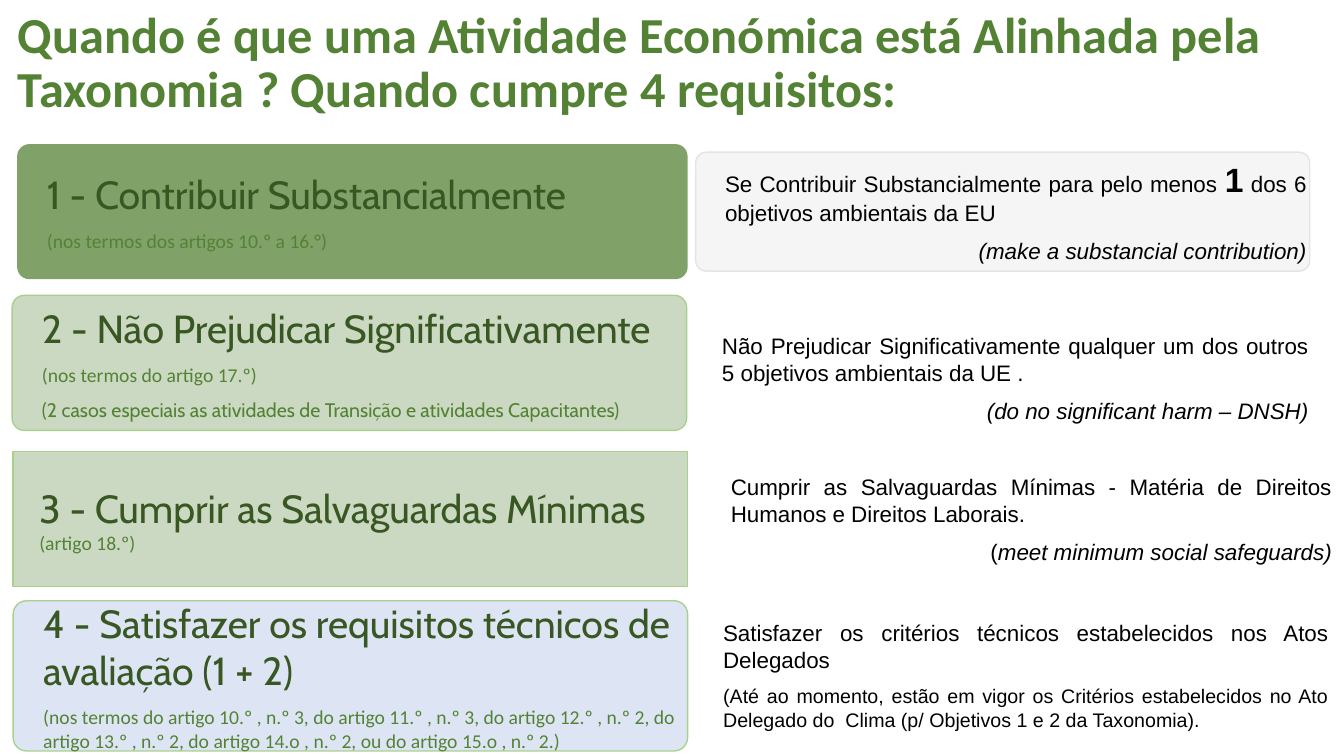
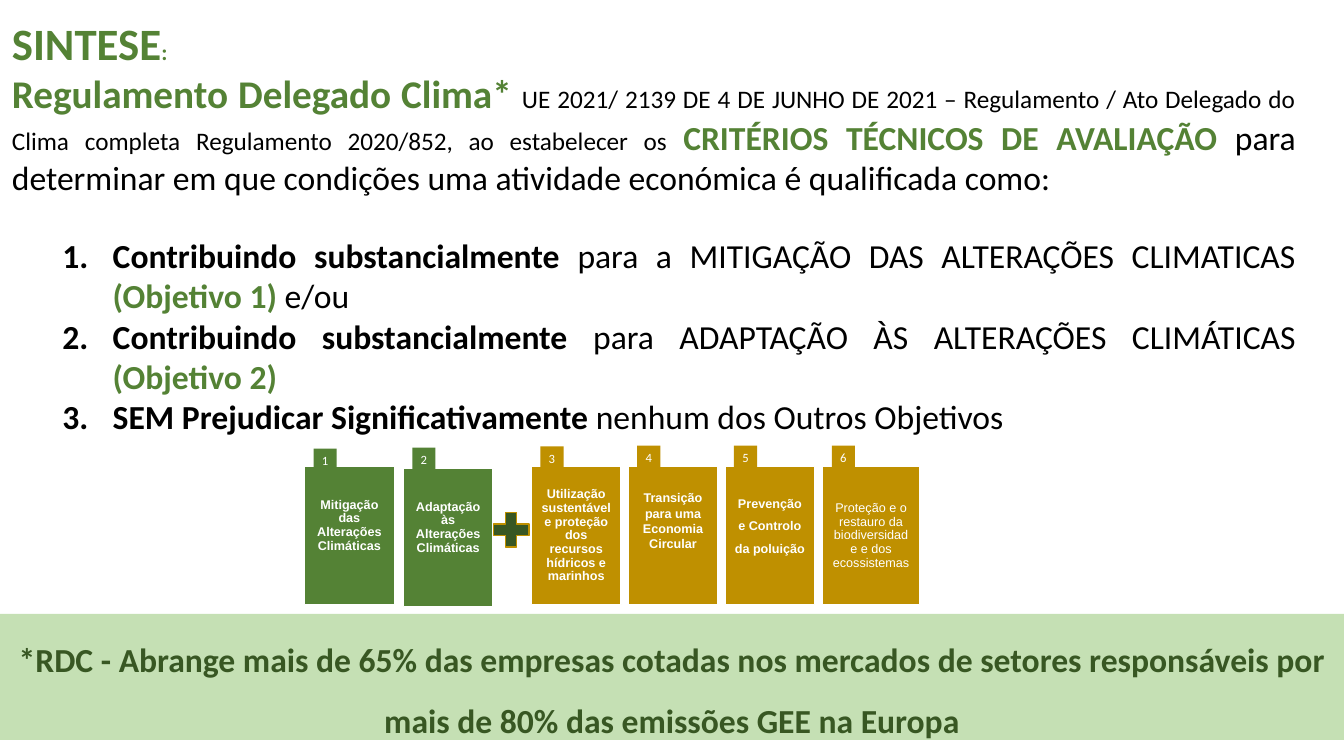
import pptx
import pptx.util
import pptx.dml.color
import pptx.enum.shapes
import pptx.enum.text
import pptx.oxml.ns
from lxml import etree

Inches, Pt = pptx.util.Inches, pptx.util.Pt
SHAPE = pptx.enum.shapes.MSO_SHAPE
ALIGN = pptx.enum.text.PP_ALIGN
ANCHOR = pptx.enum.text.MSO_ANCHOR
qn = pptx.oxml.ns.qn

GREEN, DARK_GREEN, LIGHT_GREEN = "548235", "385723", "C5E0B4"
OUTLINE, BLUE, GOLD = "A9D18E", "8FAADC", "BF9000"
GREY, BLACK, WHITE = "F5F5F5", "000000", "FFFFFF"

# Text styles: font attributes
TITLE = dict(name="Calibri", size=36, color=GREEN, bold=True)
HEADING = dict(name="Cabin", size=28, color=DARK_GREEN)
ARTICLE = dict(name="Calibri", size=14, color=GREEN)
EXPLANATION = dict(name="Arial", size=16, color=BLACK)
SUMMARY = dict(name="Calibri", size=24, color=BLACK)
ACCENT = dict(color=GREEN, bold=True)
BOLD = dict(bold=True)
ITALIC = dict(italic=True)


def rgb(color):
    return pptx.dml.color.RGBColor.from_string(color)


def set_font(font, name=None, size=None, color=None, bold=None, italic=None):
    if name:
        font.name = name
    if size:
        font.size = Pt(size)
    if color:
        font.color.rgb = rgb(color)
    if bold is not None:
        font.bold = bold
    if italic is not None:
        font.italic = italic


def set_frame(tf, anchor=ANCHOR.TOP, insets=(0.1, 0.05, 0.1, 0.05), wrap=True):
    tf.word_wrap = wrap
    tf.vertical_anchor = anchor
    tf.margin_left, tf.margin_top, tf.margin_right, tf.margin_bottom = map(Inches, insets)


def add_paragraph(tf, runs, style, align=ALIGN.LEFT, line=None, before=None,
                  indent=0, hanging=0):
    """Append a paragraph; runs is a string or a list of (text, font overrides)."""
    first = tf.paragraphs[0]
    p = tf.add_paragraph() if first.runs else first
    p.alignment = align
    if line:
        p.line_spacing = line
    if before is not None:
        p.space_before = Pt(before)
    set_font(p.font, **style)
    pPr = p._p.get_or_add_pPr()
    if indent:
        pPr.set("marL", str(Inches(indent)))
        pPr.set("indent", str(Inches(hanging)))
    for text, override in [(runs, {})] if isinstance(runs, str) else runs:
        r = p.add_run()
        r.text = text
        if override:
            set_font(r.font, **override)
    return p


def number_paragraph(p):
    pPr = p._p.get_or_add_pPr()
    bullet = etree.Element(qn("a:buAutoNum"), type="arabicPeriod")
    pPr.find(qn("a:defRPr")).addprevious(bullet)


def add_box(slide, kind, at, fill=None, alpha=100, line=None):
    sp = slide.shapes.add_shape(kind, *map(Inches, at))
    sp.shadow.inherit = False
    if fill:
        sp.fill.solid()
        sp.fill.fore_color.rgb = rgb(fill)
        if alpha < 100:
            color = sp.fill._xPr.find(qn("a:solidFill"))[0]
            etree.SubElement(color, qn("a:alpha"), val=str(alpha * 1000))
    else:
        sp.fill.background()
    if line:
        sp.line.color.rgb = rgb(line)
        sp.line.width = Pt(1)
    else:
        sp.line.fill.background()
    return sp


def add_text(slide, at):
    tf = slide.shapes.add_textbox(*map(Inches, at)).text_frame
    set_frame(tf)
    return tf


def add_panel(slide, at, paragraphs, fill=None, alpha=100, line=None, corner=0.09):
    """Rounded box holding (runs, style, alignment) paragraphs."""
    sp = add_box(slide, SHAPE.ROUNDED_RECTANGLE, at, fill, alpha, line)
    sp.adjustments[0] = corner
    set_frame(sp.text_frame, ANCHOR.MIDDLE, (0, 0, 0, 0))
    for runs, style, align in paragraphs:
        add_paragraph(sp.text_frame, runs, style, align, before=8, indent=0.26)


def add_requirement(slide, at, heading, *articles, **look):
    paragraphs = [(heading, HEADING, ALIGN.LEFT)]
    paragraphs += [(runs, ARTICLE, ALIGN.LEFT) for runs in articles]
    add_panel(slide, at, paragraphs, **look)


def add_explanation(slide, at, runs, english, **look):
    add_panel(slide, at, [(runs, EXPLANATION, ALIGN.JUSTIFY),
                          (english, EXPLANATION, ALIGN.RIGHT)], **look)


def add_objective(slide, number, left, top, tab_top, text, color, width=0.89,
                  bold=True, line=0.9, lift=0):
    """Card with a numbered tab; lift is extra bottom inset."""
    card = add_box(slide, SHAPE.RECTANGLE, (left, top, width, 1.37), color, line=WHITE)
    set_frame(card.text_frame, ANCHOR.MIDDLE, (0.08, 0.08, 0.08, 0.08 + lift))
    add_paragraph(card.text_frame, text,
                  dict(name="Arial", size=9, color=WHITE, bold=bold), ALIGN.CENTER, line)
    tab = add_box(slide, SHAPE.RECTANGLE, (left + 0.09, tab_top, 0.23, 0.24), color)
    set_frame(tab.text_frame, ANCHOR.MIDDLE, wrap=False)
    add_paragraph(tab.text_frame, str(number),
                  dict(name="Calibri", size=9, color=WHITE), ALIGN.CENTER)


def build_requirements(slide):
    add_paragraph(add_text(slide, (0.08, 0.05, 13.14, 1.18)),
                  "Quando é que uma Atividade Económica está Alinhada pela Taxonomia ? "
                  "Quando cumpre 4 requisitos:", TITLE, line=0.9)

    pale = dict(fill=GREEN, alpha=30, line=OUTLINE)
    add_requirement(slide, (0.17, 1.43, 6.65, 1.34), "1 - Contribuir Substancialmente",
                    "(nos termos dos artigos 10.º a 16.°)", fill=GREEN, alpha=74)
    add_requirement(slide, (0.12, 2.93, 6.69, 1.34), "2 - Não Prejudicar Significativamente",
                    "(nos termos do artigo 17.º)",
                    [("(2 casos especiais as atividades de Transição e atividades "
                      "Capacitantes)", dict(name="Cabin"))], **pale)
    add_requirement(slide, (0.13, 4.48, 6.69, 1.34),
                    [("3 - Cumprir as Salvaguardas Mínimas ", {}),
                     ("(artigo 18.º)", ARTICLE)], corner=0, **pale)
    add_requirement(slide, (0.13, 5.96, 6.69, 1.49),
                    "4 - Satisfazer os requisitos técnicos de avaliação (1 + 2)",
                    "(nos termos do artigo 10.º , n.º 3, do artigo 11.º , n.º 3, do artigo "
                    "12.º , n.º 2, do artigo 13.º , n.º 2, do artigo 14.o , n.º 2, ou do "
                    "artigo 15.o , n.º 2.)", fill=BLUE, alpha=30, line=OUTLINE)

    add_explanation(slide, (6.9, 1.51, 6.09, 1.18),
                    [("Se Contribuir Substancialmente para pelo menos ", {}),
                     ("1", dict(size=24, bold=True)),
                     (" dos 6 objetivos ambientais da EU", {})],
                    [("(make a substancial contribution)", ITALIC)], fill=GREY, line="E4E4E4")
    add_explanation(slide, (6.87, 3.16, 6.14, 1.18),
                    "Não Prejudicar Significativamente qualquer um dos outros 5 objetivos "
                    "ambientais da UE .", [("(do no significant harm – DNSH)", ITALIC)])
    add_explanation(slide, (6.96, 4.6, 6.28, 1.1),
                    "Cumprir as Salvaguardas Mínimas - Matéria de Direitos Humanos e "
                    "Direitos Laborais.",
                    [("(", {}), ("meet minimum social safeguards)", ITALIC)])
    add_panel(slide, (6.87, 5.9, 6.35, 1.6), [
        ("Satisfazer os critérios técnicos estabelecidos nos Atos Delegados",
         EXPLANATION, ALIGN.JUSTIFY),
        ("(Até ao momento, estão em vigor os Critérios estabelecidos no Ato Delegado do  "
         "Clima (p/ Objetivos 1 e 2 da Taxonomia).",
         dict(EXPLANATION, size=14), ALIGN.JUSTIFY)])


def build_summary(slide):
    objectives = [
        (3.02, 4.63, 4.45, "Mitigação das Alterações Climáticas", GREEN, dict(lift=0.2)),
        (4.0, 4.65, 4.44, "Adaptação às Alterações Climáticas", GREEN, dict(lift=0.2)),
        (5.27, 4.63, 4.43, "Utilização sustentável e proteção dos recursos hídricos e "
         "marinhos", GOLD, {}),
        (6.23, 4.63, 4.42, "Transição para uma Economia Circular", GOLD,
         dict(line=1, lift=0.3)),
        (7.19, 4.63, 4.42, "Prevenção e Controlo da poluição", GOLD,
         dict(line=1.5, lift=0.27)),
        (8.16, 4.63, 4.42, "Proteção e o restauro da biodiversidade e dos ecossistemas",
         GOLD, dict(width=0.96, bold=False)),
    ]
    for number, (left, top, tab_top, text, color, look) in enumerate(objectives, 1):
        add_objective(slide, number, left, top, tab_top, text, color, **look)
    add_box(slide, SHAPE.MATH_PLUS, (4.83, 5.02, 0.48, 0.47), DARK_GREEN, line=GOLD)

    tf = add_text(slide, (0.02, -0.16, 12.93, 4.58))
    add_paragraph(tf, [("SINTESE", dict(size=32)), (":", dict(size=16))],
                  dict(SUMMARY, **ACCENT), ALIGN.JUSTIFY, line=1.5)
    add_paragraph(tf, [
        ("Regulamento Delegado Clima* ", dict(ACCENT, size=28)),
        ("UE 2021/ 2139 DE 4 DE JUNHO DE 2021 – Regulamento / Ato Delegado do Clima "
         "completa Regulamento 2020/852, ao estabelecer os ", dict(size=18)),
        ("CRITÉRIOS TÉCNICOS DE AVALIAÇÃO ", ACCENT),
        ("para determinar em que condições uma atividade económica é qualificada como: ", {}),
    ], SUMMARY, ALIGN.JUSTIFY)
    conditions = [
        [("Contribuindo substancialmente ", BOLD),
         ("para a MITIGAÇÃO DAS ALTERAÇÕES CLIMATICAS ", {}),
         ("(Objetivo 1) ", ACCENT), ("e/ou ", {})],
        [("Contribuindo substancialmente ", BOLD),
         ("para ADAPTAÇÃO ÀS ALTERAÇÕES CLIMÁTICAS ", {}), ("(Objetivo 2) ", ACCENT)],
        [("SEM Prejudicar Significativamente ", BOLD), ("nenhum dos Outros Objetivos ", {})],
    ]
    for i, runs in enumerate(conditions):
        number_paragraph(add_paragraph(tf, runs, SUMMARY, ALIGN.JUSTIFY,
                                       before=0 if i else 27, indent=1, hanging=-0.5))

    band = add_box(slide, SHAPE.RECTANGLE, (0, 6.09, 13.33, 1.25), LIGHT_GREEN)
    set_frame(band.text_frame)
    add_paragraph(band.text_frame,
                  "*RDC - Abrange mais de 65% das empresas cotadas nos mercados de setores "
                  "responsáveis por mais de 80% das emissões GEE na Europa",
                  dict(SUMMARY, color=DARK_GREEN, bold=True), ALIGN.CENTER, line=1.5)


def main():
    prs = pptx.Presentation()
    prs.slide_width, prs.slide_height = Inches(13.33), Inches(7.5)
    for build in (build_requirements, build_summary):
        build(prs.slides.add_slide(prs.slide_layouts[6]))
    prs.save("out.pptx")


if __name__ == "__main__":
    main()
